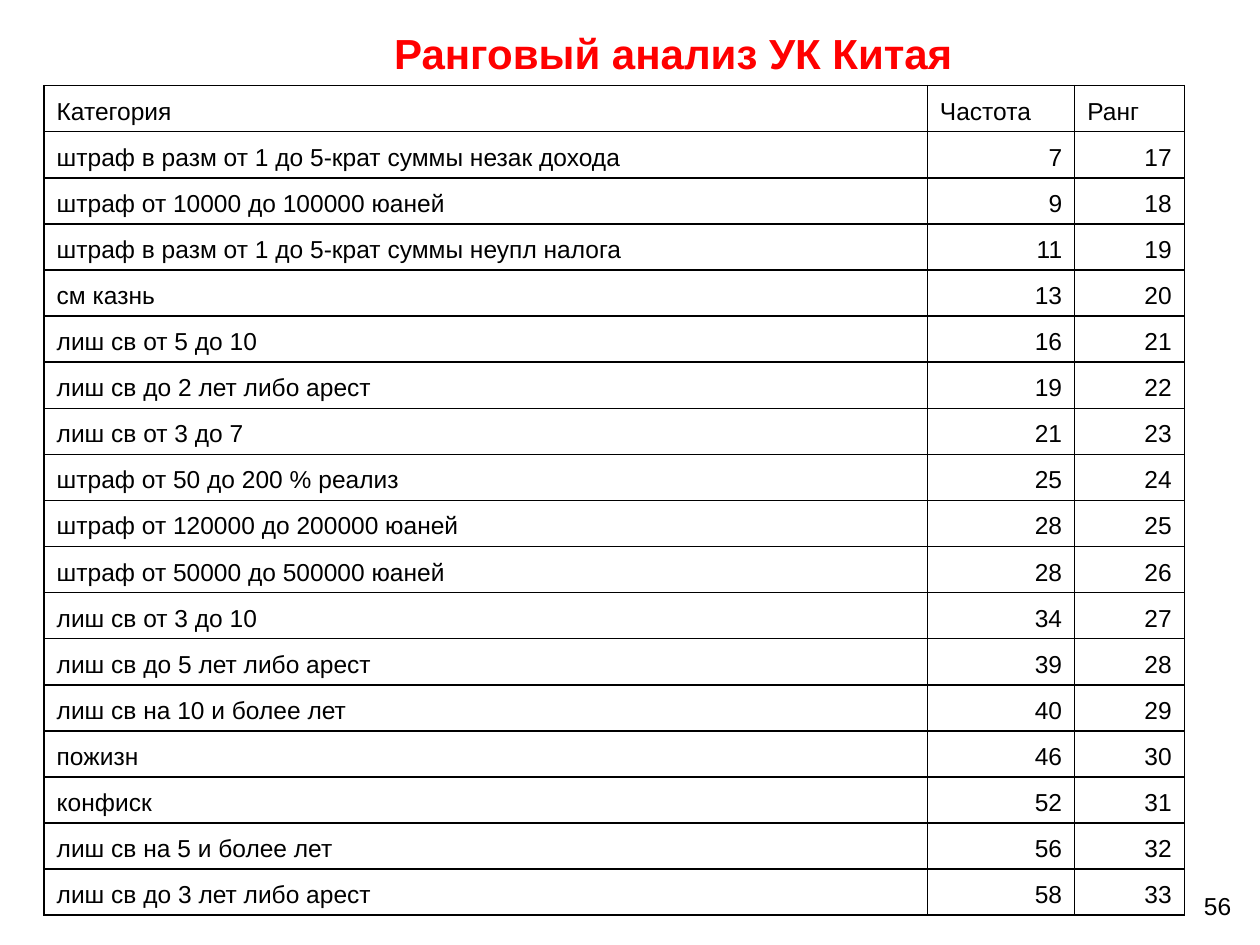
from dataclasses import dataclass

from lxml import etree
from pptx import Presentation
from pptx.dml.color import RGBColor
from pptx.enum import text
from pptx.oxml import ns
from pptx.util import Inches, Pt


@dataclass(frozen=True)
class Theme:
    font: str = "Arial"
    ink: str = "000000"
    accent: str = "FF0000"
    title_size: int = 24
    body_size: int = 14
    border: int = 1


THEME = Theme()
TITLE = "Ранговый анализ УК Китая "
PAGE_NUMBER = "56"
HEADER = ("Категория", "Частота", "Ранг")
FIRST_RANK = 17
FREQUENCIES = [
    ("штраф в разм от 1 до 5-крат суммы незак дохода", 7),
    ("штраф от 10000 до 100000 юаней", 9),
    ("штраф в разм от 1 до 5-крат суммы неупл налога", 11),
    ("см казнь", 13),
    ("лиш св от 5 до 10", 16),
    ("лиш св до 2 лет либо арест", 19),
    ("лиш св от 3 до 7", 21),
    ("штраф от 50 до 200 % реализ", 25),
    ("штраф от 120000 до 200000 юаней", 28),
    ("штраф от 50000 до 500000 юаней", 28),
    ("лиш св от 3 до 10", 34),
    ("лиш св до 5 лет либо арест", 39),
    ("лиш св на 10 и более лет", 40),
    ("пожизн", 46),
    ("конфиск", 52),
    ("лиш св на 5 и более лет", 56),
    ("лиш св до 3 лет либо арест", 58),
]
COLUMN_WIDTHS = (7.01, 1.17, 0.87)
TABLE_LEFT, TABLE_TOP, TABLE_HEIGHT = 0.35, 0.68, 6.59


def write(frame, content, align, size=THEME.body_size, color=THEME.ink, bold=False):
    para = frame.paragraphs[0]
    para.alignment = align
    span = para.add_run()
    span.text = content
    span.font.name = THEME.font
    span.font.size = Pt(size)
    span.font.bold = bold
    span.font.color.rgb = RGBColor.from_string(color)
    return para


def add_box(page, left, top, width, height, anchor):
    box = page.shapes.add_textbox(Inches(left), Inches(top), Inches(width), Inches(height))
    box.text_frame.word_wrap = True
    box.text_frame.vertical_anchor = anchor
    return box.text_frame


def add_borders(cell):
    properties = cell._tc.get_or_add_tcPr()
    for position, side in enumerate(("lnL", "lnR", "lnT", "lnB")):
        line = etree.Element(ns.qn(f"a:{side}"), w=str(Pt(THEME.border)))
        fill = etree.SubElement(line, ns.qn("a:solidFill"))
        etree.SubElement(fill, ns.qn("a:srgbClr"), val=THEME.ink)
        properties.insert(position, line)


def add_rank_table(page):
    rows = [HEADER] + [
        (category, str(frequency), str(rank))
        for rank, (category, frequency) in enumerate(FREQUENCIES, FIRST_RANK)
    ]
    table = page.shapes.add_table(
        len(rows), len(HEADER), Inches(TABLE_LEFT), Inches(TABLE_TOP),
        Inches(sum(COLUMN_WIDTHS)), Inches(TABLE_HEIGHT),
    ).table
    table.first_row = table.horz_banding = False
    for column, width in zip(table.columns, COLUMN_WIDTHS):
        column.width = Inches(width)
    for row_index, values in enumerate(rows):
        table.rows[row_index].height = Inches(TABLE_HEIGHT / len(rows))
        for column_index, value in enumerate(values):
            cell = table.cell(row_index, column_index)
            cell.fill.background()
            cell.vertical_anchor = text.MSO_ANCHOR.BOTTOM
            numeric = row_index and column_index
            write(cell.text_frame, value, text.PP_ALIGN.RIGHT if numeric else text.PP_ALIGN.LEFT)
            add_borders(cell)


def main():
    deck = Presentation()
    deck.slide_width, deck.slide_height = Inches(10), Inches(7.5)
    page = deck.slides.add_slide(deck.slide_layouts[6])

    number = add_box(page, 7.17, 7.02, 2.7, 0.33, text.MSO_ANCHOR.TOP)
    write(number, PAGE_NUMBER, text.PP_ALIGN.RIGHT)
    add_rank_table(page)
    title = add_box(page, 1.22, 0, 8.34, 0.63, text.MSO_ANCHOR.MIDDLE)
    heading = write(title, TITLE, text.PP_ALIGN.CENTER, THEME.title_size, THEME.accent, True)
    heading.line_spacing = 1.5

    deck.save("out.pptx")


if __name__ == "__main__":
    main()
